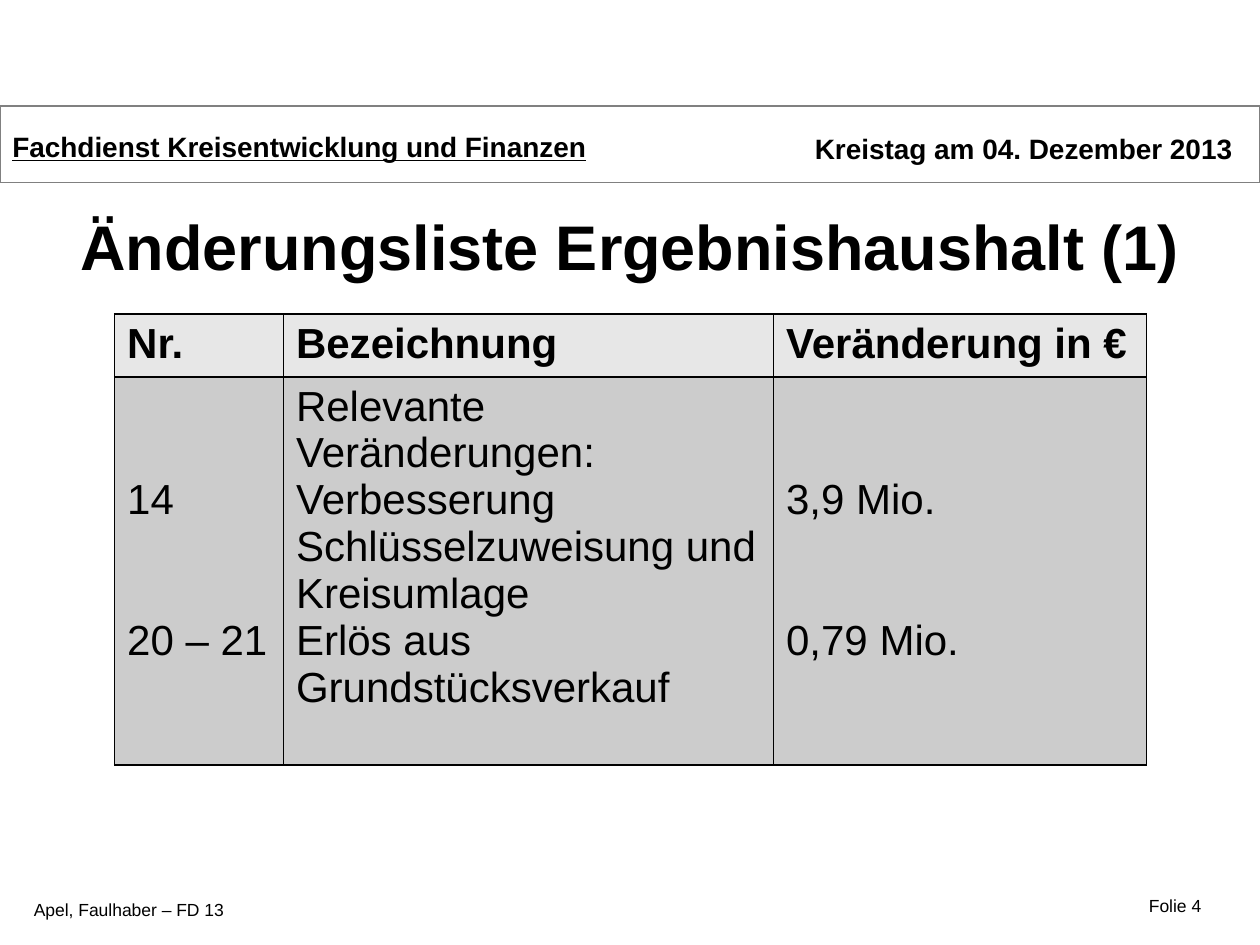
from dataclasses import dataclass

from lxml import etree
from pptx import Presentation
from pptx.dml.color import RGBColor
from pptx.enum.shapes import MSO_SHAPE
from pptx.enum.text import MSO_ANCHOR, PP_ALIGN
from pptx.oxml.ns import qn
from pptx.util import Inches, Pt

RECTANGLE = MSO_SHAPE.RECTANGLE
MIDDLE, TOP = MSO_ANCHOR.MIDDLE, MSO_ANCHOR.TOP
LEFT, CENTER, RIGHT = PP_ALIGN.LEFT, PP_ALIGN.CENTER, PP_ALIGN.RIGHT


@dataclass(frozen=True)
class Theme:
    """Colours, font and type sizes of the slide."""
    font: str = "Arial"
    ink: str = "000000"
    frame: str = "808080"
    header_fill: str = "E7E7E7"
    body_fill: str = "CCCCCC"
    title: int = 36
    table: int = 24
    banner: int = 16
    footer: int = 10
    border: float = 1
    line_height: float = 26.8


THEME = Theme()
COLUMN_WIDTHS = (1.34, 3.89, 2.96)
ROW_HEIGHTS = (0.49, 3.08)
HEADINGS = ("Nr.", "Bezeichnung", "Veränderung in €")
ENTRIES = (
    ("14", "20 – 21"),
    ("Relevante Veränderungen:", "Verbesserung Schlüsselzuweisung und Kreisumlage",
     "Erlös aus Grundstücksverkauf"),
    ("3,9 Mio.", "0,79 Mio."),
)
SKIPPED_LINES = (2, 0, 2)


def write(frame, *lines, size, bold=False, underline=False, align=LEFT, gap=0):
    """Write one paragraph per line, with a gap between paragraphs."""
    frame.word_wrap = True
    for index, line in enumerate(lines):
        paragraph = frame.paragraphs[0] if index == 0 else frame.add_paragraph()
        paragraph.alignment = align
        paragraph.space_before = Pt(gap if index else 0)
        run = paragraph.add_run()
        run.text = line
        run.font.name = THEME.font
        run.font.size = Pt(size)
        run.font.bold = bold
        run.font.underline = underline
        run.font.color.rgb = RGBColor.from_string(THEME.ink)


def add_label(slide, text, box, **text_format):
    """Add a vertically centred text box."""
    label = slide.shapes.add_textbox(*map(Inches, box))
    label.text_frame.vertical_anchor = MIDDLE
    write(label.text_frame, text, **text_format)


def add_banner(slide, left, top, width, height):
    """Add the framed banner with department and meeting date."""
    banner = slide.shapes.add_shape(RECTANGLE, *map(Inches, (left, top, width, height)))
    banner.shadow.inherit = False
    banner.fill.background()
    banner.line.color.rgb = RGBColor.from_string(THEME.frame)
    banner.line.width = Pt(0.75)
    banner.text_frame.vertical_anchor = MIDDLE
    banner.text_frame.margin_top = Inches(0.08)
    write(banner.text_frame, "Fachdienst Kreisentwicklung und Finanzen",
          size=THEME.banner, bold=True, underline=True)
    add_label(slide, "Kreistag am 04. Dezember 2013",
              (left + width - 3.82, top + 0.15, 3.7, 0.37),
              size=THEME.banner, bold=True, align=RIGHT)


def style_cell(cell, color):
    """Give a cell its borders and fill."""
    properties = cell._tc.get_or_add_tcPr()
    for side in ("a:lnL", "a:lnR", "a:lnT", "a:lnB"):
        border = etree.SubElement(properties, qn(side), w=str(Pt(THEME.border)))
        fill = etree.SubElement(border, qn("a:solidFill"))
        etree.SubElement(fill, qn("a:srgbClr"), val=THEME.ink)
    cell.fill.solid()
    cell.fill.fore_color.rgb = RGBColor.from_string(color)
    cell.vertical_anchor = TOP


def add_changes_table(slide, left, top):
    """Add the table of budget changes."""
    shape = slide.shapes.add_table(
        len(ROW_HEIGHTS), len(COLUMN_WIDTHS), Inches(left), Inches(top),
        Inches(sum(COLUMN_WIDTHS)), Inches(sum(ROW_HEIGHTS)))
    table = shape.table
    for row, height in zip(table.rows, ROW_HEIGHTS):
        row.height = Inches(height)
    for index, width in enumerate(COLUMN_WIDTHS):
        table.columns[index].width = Inches(width)
        heading, entry = table.cell(0, index), table.cell(1, index)
        style_cell(heading, THEME.header_fill)
        style_cell(entry, THEME.body_fill)
        write(heading.text_frame, HEADINGS[index], size=THEME.table, bold=True)
        offset = SKIPPED_LINES[index] * THEME.line_height
        entry.margin_top = Inches(0.05) + Pt(offset)
        write(entry.text_frame, *ENTRIES[index], size=THEME.table, gap=offset)


def add_footer(slide, left, top, width):
    """Add the authors and the slide number."""
    add_label(slide, "Apel, Faulhaber – FD 13", (left, top + 0.03, 1.71, 0.27),
              size=THEME.footer)
    add_label(slide, "Folie 4", (left + width - 0.87, top, 0.87, 0.27),
              size=THEME.footer)


def main():
    """Build and save the slide."""
    presentation = Presentation()
    presentation.slide_width, presentation.slide_height = Inches(10), Inches(7.5)
    slide = presentation.slides.add_slide(presentation.slide_layouts[6])
    add_banner(slide, 0, 0.84, 10, 0.61)
    add_label(slide, "Änderungsliste Ergebnishaushalt (1)", (0.51, 1.55, 8.98, 0.79),
              size=THEME.title, bold=True, align=CENTER)
    add_changes_table(slide, 0.91, 2.49)
    add_footer(slide, 0.17, 7.05, 9.72)
    presentation.save("out.pptx")


if __name__ == "__main__":
    main()
